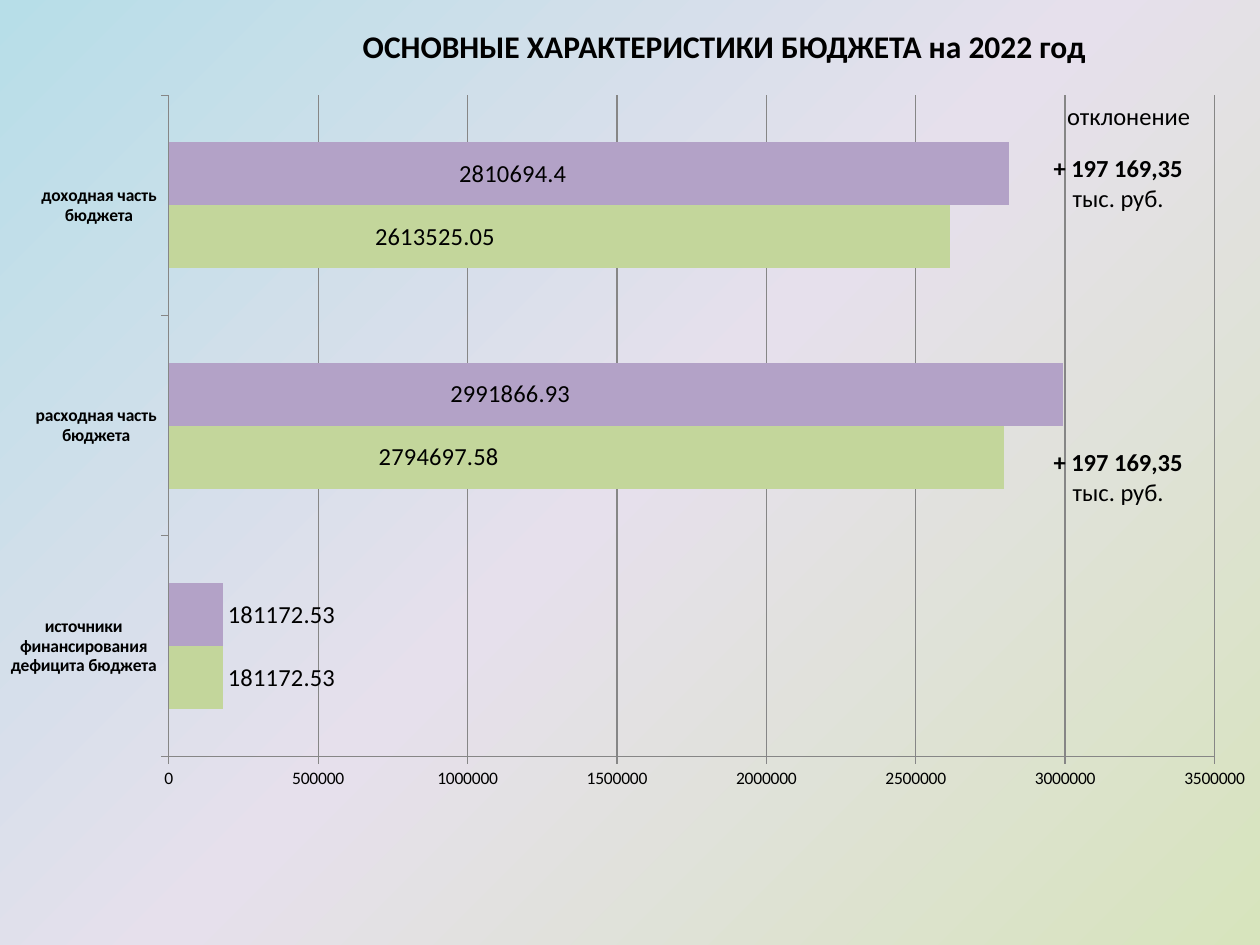
import copy

import lxml.etree
import pptx
import pptx.chart.data
import pptx.dml.color
import pptx.enum.chart
import pptx.enum.text
import pptx.oxml.ns
import pptx.util

Pt = pptx.util.Pt
qn = pptx.oxml.ns.qn

FONT = "Calibri"
COLORS = {"text": "000000", "axis": "868686"}
BACKGROUND = ["B7DEE8", "E6E0EC", "D7E4BD"]
TITLE = "ОСНОВНЫЕ ХАРАКТЕРИСТИКИ БЮДЖЕТА на 2022 год"
TITLE_BOX = (198, 12, 432, 29)
CHART_BOX = (0, 54, 720, 486)
PLOT_LAYOUT = {"x": 0.134, "y": 0, "w": 0.83, "h": 0.778}
CATEGORIES = [
    "источники финансирования дефицита бюджета",
    "расходная часть бюджета",
    "доходная часть бюджета",
]
SERIES = [
    {
        "color": "C3D69B",
        "values": [181172.53, 2794697.58, 2613525.05],
        "label_shifts": {1: -0.5, 2: -0.46},
    },
    {
        "color": "B3A2C7",
        "values": [181172.53, 2991866.93, 2810694.4],
        "label_shifts": {1: -0.49, 2: -0.44},
    },
]
DEVIATION = [("+ 197 169,35", True), ("тыс. руб.", False)]
NOTES = [
    ((588, 54, 114, 24), [("отклонение", False)]),
    ((588, 84, 102, 41), DEVIATION),
    ((588, 252, 102, 41), DEVIATION),
]


def rgb(value):
    return pptx.dml.color.RGBColor.from_string(value)


def style_font(font, size, bold=False):
    font.name = FONT
    font.size = Pt(size)
    font.bold = bold
    font.color.rgb = rgb(COLORS["text"])


def write_lines(box, lines, size):
    frame = box.text_frame
    for index, (words, bold) in enumerate(lines):
        para = frame.add_paragraph() if index else frame.paragraphs[0]
        para.text = words
        para.alignment = pptx.enum.text.PP_ALIGN.CENTER
        style_font(para.font, size, bold)


def paint_background(page):
    fill = page.background.fill
    fill.gradient()
    fill.gradient_angle = 315
    stops = page.element.find(".//" + qn("a:gsLst"))
    stops.insert(1, copy.deepcopy(stops[0]))
    for index, color in enumerate(BACKGROUND):
        stop = fill.gradient_stops[index]
        stop.color.rgb = rgb(color)
        stop.position = index / (len(BACKGROUND) - 1)


def manual_layout(values, inner=False):
    layout = lxml.etree.Element(qn("c:layout"))
    manual = lxml.etree.SubElement(layout, qn("c:manualLayout"))
    settings = dict(values)
    if inner:
        settings = {"layoutTarget": "inner", "xMode": "edge", "yMode": "edge", **values}
    for name, value in settings.items():
        lxml.etree.SubElement(manual, qn("c:" + name)).set("val", str(value))
    return layout


def style_axis(axis, bold=False):
    style_font(axis.tick_labels.font, 10, bold)
    axis.major_tick_mark = pptx.enum.chart.XL_TICK_MARK.OUTSIDE
    axis.minor_tick_mark = pptx.enum.chart.XL_TICK_MARK.NONE
    axis.format.line.color.rgb = rgb(COLORS["axis"])
    axis.format.line.width = Pt(0.75)


def hide_leader_lines(chart):
    tag = qn("c:showLeaderLines")
    for labels in chart.element.iter(qn("c:dLbls")):
        for old in labels.findall(tag):
            labels.remove(old)
        lxml.etree.SubElement(labels, tag).set("val", "0")


def add_budget_chart(page):
    data = pptx.chart.data.CategoryChartData()
    data.categories = CATEGORIES
    for entry in SERIES:
        data.add_series("", entry["values"])
    chart = page.shapes.add_chart(
        pptx.enum.chart.XL_CHART_TYPE.BAR_CLUSTERED, *map(Pt, CHART_BOX), data
    ).chart
    chart.has_title = False
    chart.has_legend = False
    style_font(chart.font, 18)
    plot = chart.plots[0]
    plot.gap_width = 150
    plot.overlap = 0
    plot.vary_by_categories = False

    style_axis(chart.category_axis, bold=True)
    values = chart.value_axis
    style_axis(values)
    values.minimum_scale = 0
    values.maximum_scale = 3500000
    values.major_unit = 500000
    values.has_major_gridlines = True
    values.major_gridlines.format.line.color.rgb = rgb(COLORS["axis"])
    values.major_gridlines.format.line.width = Pt(0.75)

    outside = pptx.enum.chart.XL_LABEL_POSITION.OUTSIDE_END
    shifts = []
    for series, entry in zip(plot.series, SERIES):
        series.format.fill.solid()
        series.format.fill.fore_color.rgb = rgb(entry["color"])
        series.data_labels.show_value = True
        series.data_labels.position = outside
        style_font(series.data_labels.font, 14)
        for index, shift in entry["label_shifts"].items():
            label = series.points[index].data_label
            style_font(label.font, 14)
            label.position = outside
            shifts.append(shift)
    for label, shift in zip(chart.element.iter(qn("c:dLbl")), shifts):
        label.insert(1, manual_layout({"x": shift, "y": 0}))
    hide_leader_lines(chart)

    area = chart.element.find(".//" + qn("c:plotArea"))
    for old in area.findall(qn("c:layout")):
        area.remove(old)
    area.insert(0, manual_layout(PLOT_LAYOUT, inner=True))


def main():
    """Build the budget slide and save it."""
    deck = pptx.Presentation()
    deck.slide_width, deck.slide_height = Pt(720), Pt(540)
    page = deck.slides.add_slide(deck.slide_layouts[5])
    paint_background(page)
    add_budget_chart(page)

    title = page.shapes.title
    title.left, title.top, title.width, title.height = map(Pt, TITLE_BOX)
    title.text_frame.word_wrap = False
    write_lines(title, [(TITLE, True)], 18)

    for bounds, lines in NOTES:
        box = page.shapes.add_textbox(*map(Pt, bounds))
        box.text_frame.word_wrap = True
        write_lines(box, lines, 14)
    deck.save("out.pptx")


if __name__ == "__main__":
    main()
